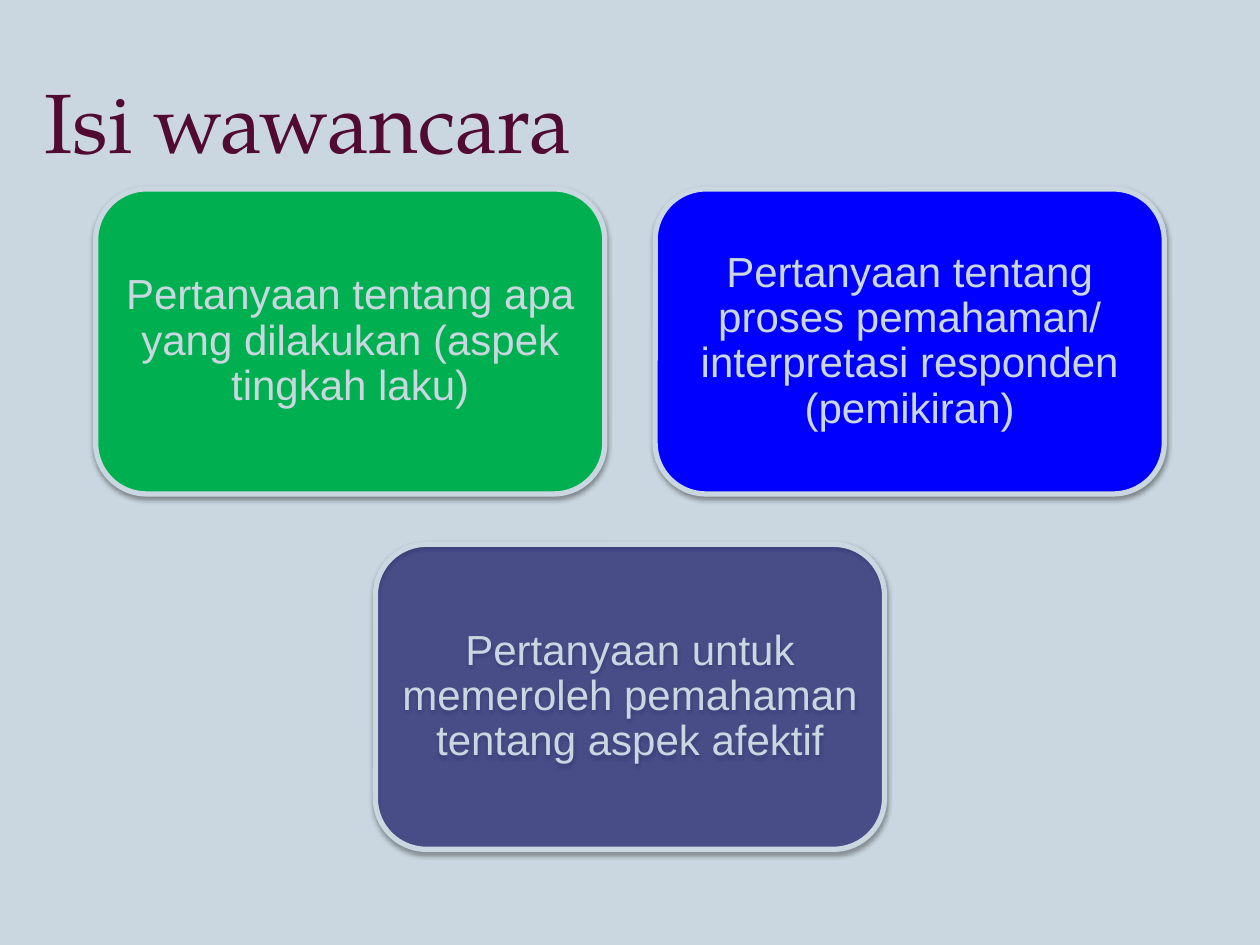
import pptx
import pptx.util
import pptx.dml.color
import pptx.enum.shapes
import pptx.enum.text
import pptx.oxml
import pptx.oxml.ns
import lxml.etree

Inches = pptx.util.Inches
Pt = pptx.util.Pt
RGBColor = pptx.dml.color.RGBColor

PALE = RGBColor(0xCA, 0xD7, 0xE0)
PLUM = RGBColor(0x51, 0x0A, 0x31)
GREEN = RGBColor(0x00, 0xB0, 0x50)
BLUE = RGBColor(0x00, 0x00, 0xFF)
NAVY = RGBColor(0x00, 0x00, 0x66)

CARD_WIDTH, CARD_HEIGHT, GAP = 4.04, 2.42, 0.4
CARDS = [
    (0, 0, GREEN, 100, "Pertanyaan tentang apa yang dilakukan (aspek tingkah laku)"),
    (1, 0, BLUE, 100, "Pertanyaan tentang proses pemahaman/ interpretasi responden (pemikiran)"),
    (0.5, 1, NAVY, 54, "Pertanyaan untuk memeroleh pemahaman tentang aspek afektif"),
]


def add_alpha(color_element, percent):
    """Give a colour element an opacity in percent."""
    alpha = lxml.etree.SubElement(color_element, pptx.oxml.ns.qn("a:alpha"))
    alpha.set("val", str(percent * 1000))


def add_shadow(shape):
    """Cast a soft shadow straight down from a shape."""
    shape.shadow.inherit = False
    effects = shape.element.spPr.find(pptx.oxml.ns.qn("a:effectLst"))
    shadow = lxml.etree.SubElement(effects, pptx.oxml.ns.qn("a:outerShdw"))
    shadow.set("blurRad", str(Pt(3.1)))
    shadow.set("dist", str(Pt(1.6)))
    shadow.set("dir", "5400000")
    shadow.set("rotWithShape", "0")
    color = lxml.etree.SubElement(shadow, pptx.oxml.ns.qn("a:srgbClr"))
    color.set("val", "000000")
    add_alpha(color, 38)


def style_text(para, font_name, size, color):
    """Format every run of a paragraph."""
    for span in para.runs:
        span.font.name = font_name
        span.font.size = Pt(size)
        span.font.color.rgb = color


def add_title(page, left, top, width, height):
    """Place and format the title placeholder."""
    title = page.shapes.title
    title.left, title.top = Inches(left), Inches(top)
    title.width, title.height = Inches(width), Inches(height)
    frame = title.text_frame
    frame.text = "Isi wawancara"
    frame.vertical_anchor = pptx.enum.text.MSO_ANCHOR.MIDDLE
    frame.paragraphs[0].alignment = pptx.enum.text.PP_ALIGN.LEFT
    style_text(frame.paragraphs[0], "TeX Gyre Pagella", 48, PLUM)


def add_card(page, left, top, fill, opacity, text):
    """Draw one rounded card with centred text."""
    card = page.shapes.add_shape(
        pptx.enum.shapes.MSO_SHAPE.ROUNDED_RECTANGLE,
        Inches(left), Inches(top), Inches(CARD_WIDTH), Inches(CARD_HEIGHT))
    card.fill.solid()
    card.fill.fore_color.rgb = fill
    if opacity < 100:
        add_alpha(card.element.spPr.find(".//" + pptx.oxml.ns.qn("a:srgbClr")), opacity)
    card.line.color.rgb = PALE
    card.line.width = Pt(3)
    add_shadow(card)
    frame = card.text_frame
    frame.word_wrap = True
    frame.margin_left = frame.margin_right = 0
    frame.margin_top = frame.margin_bottom = 0
    frame.vertical_anchor = pptx.enum.text.MSO_ANCHOR.MIDDLE
    frame.text = text
    para = frame.paragraphs[0]
    para.alignment = pptx.enum.text.PP_ALIGN.CENTER
    para.line_spacing = 0.9
    style_text(para, "Arial", 24, PALE)


def add_cards(page, left, top):
    """Lay the cards out on a grid of equal gaps."""
    for column, row, fill, opacity, text in CARDS:
        add_card(page, left + column * (CARD_WIDTH + GAP),
                 top + row * (CARD_HEIGHT + GAP), fill, opacity, text)


def main():
    """Build and save the deck."""
    deck = pptx.Presentation()
    deck.slide_width, deck.slide_height = Inches(10), Inches(7.5)
    page = deck.slides.add_slide(deck.slide_layouts[5])
    page.background.fill.solid()
    page.background.fill.fore_color.rgb = PALE
    add_cards(page, 0.76, 1.5)
    add_title(page, 0.25, 0.33, 9.5, 1.25)
    deck.save("out.pptx")


if __name__ == "__main__":
    main()
